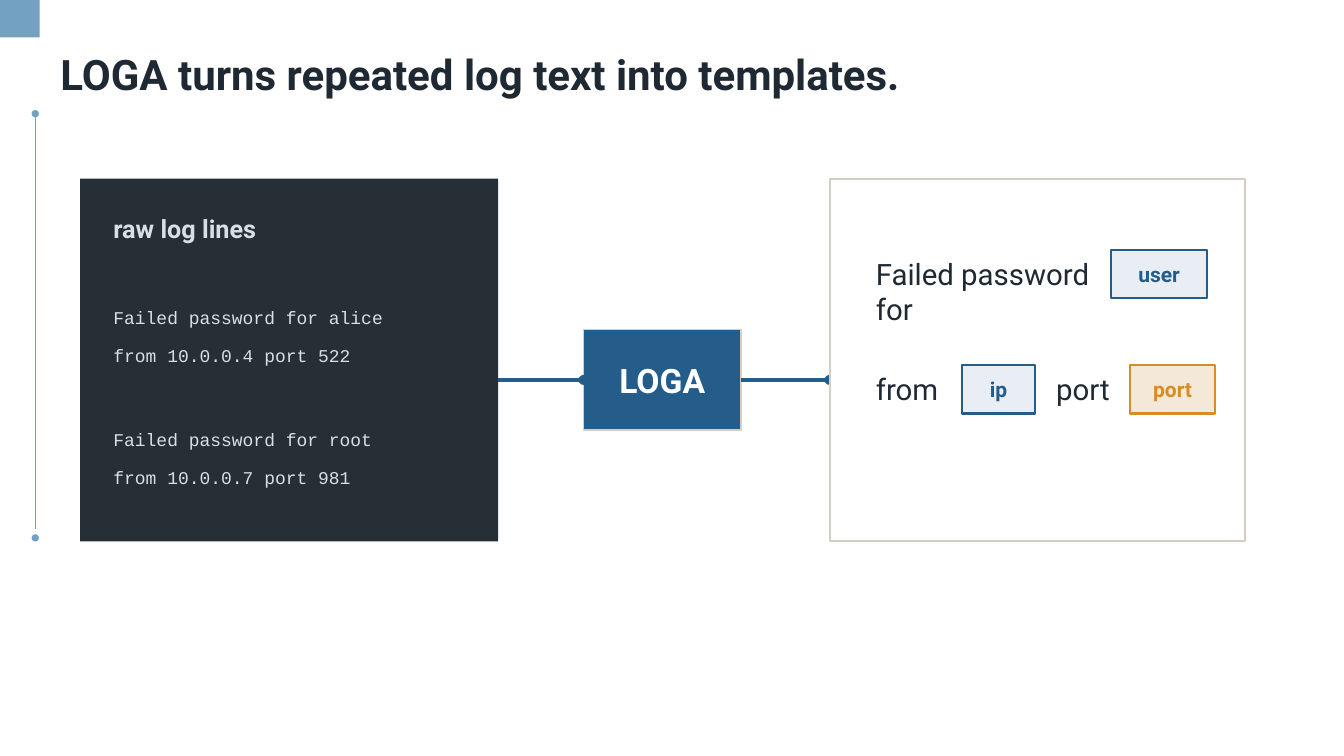
from lxml.etree import SubElement
from pptx import Presentation
from pptx.dml.color import RGBColor
from pptx.enum.shapes import MSO_CONNECTOR, MSO_SHAPE
from pptx.enum.text import MSO_ANCHOR, PP_ALIGN
from pptx.oxml.ns import qn
from pptx.util import Pt

# Content
TITLE = "LOGA turns repeated log text into templates."
HEAD = "raw log lines"
LOGS = [
    ("Failed password for alice", "from 10.0.0.4 port 522"),
    ("Failed password for root", "from 10.0.0.7 port 981"),
]
TOOL = "LOGA"
INK, BLUE, SKY, PALE = "1F2933", "245C8A", "73A1C1", "D8E0E4"
DARK, SAND, WHITE, AMBER = "272F36", "D6CEC3", "FFFFFF", "D98C24"
ICE, CREAM = "E9EEF5", "F4E8D8"
# Template rows: top of the chips, words (text, left, width),
# chips (text, left, width, fill, colour)
ROWS = [
    (178.4, [("Failed password for", 625.6, 166.4)],
     [("user", 793.4, 69.1, ICE, BLUE)]),
    (260.8, [("from", 625.6, 48.2), ("port", 754.4, 46.8)],
     [("ip", 687, 52.6, ICE, BLUE), ("port", 807, 61.2, CREAM, AMBER)]),
]

deck = Presentation()
deck.slide_width, deck.slide_height = Pt(960), Pt(540)
slide = deck.slides.add_slide(deck.slide_layouts[5])
parts = slide.shapes


def tint(code):
    return RGBColor.from_string(code)


def write(shape, text, size, color, bold=False, face="Roboto",
          align=PP_ALIGN.LEFT, anchor=MSO_ANCHOR.TOP):
    frame = shape.text_frame
    frame.word_wrap = True
    frame.vertical_anchor = anchor
    frame.margin_left = frame.margin_right = 0
    frame.margin_top = frame.margin_bottom = 0
    para = frame.paragraphs[0]
    para.alignment = align
    run = para.add_run()
    run.text = text
    font = run.font
    font.name, font.size, font.bold = face, Pt(size), bold
    font.color.rgb = tint(color)


def label(x, y, w, h, *args, **opts):
    box = parts.add_textbox(Pt(x), Pt(y), Pt(w), Pt(h))
    write(box, *args, **opts)


def block(x, y, w, h, fill, line=None, width=1.5, kind=MSO_SHAPE.RECTANGLE):
    shape = parts.add_shape(kind, Pt(x), Pt(y), Pt(w), Pt(h))
    shape.shadow.inherit = False
    shape.fill.solid()
    shape.fill.fore_color.rgb = tint(fill)
    if line:
        shape.line.color.rgb = tint(line)
        shape.line.width = Pt(width)
    else:
        shape.line.fill.background()
    return shape


def dot(x, y, size, fill):
    block(x - size / 2, y - size / 2, size, size, fill, kind=MSO_SHAPE.OVAL)


def link(x1, y1, x2, y2, color, width):
    wire = parts.add_connector(MSO_CONNECTOR.STRAIGHT,
                               Pt(x1), Pt(y1), Pt(x2), Pt(y2))
    wire.line.color.rgb = tint(color)
    wire.line.width = Pt(width)
    SubElement(wire._element.spPr, qn("a:effectLst"))
    return wire


MID = {"align": PP_ALIGN.CENTER, "anchor": MSO_ANCHOR.MIDDLE}

# Title
title = parts.title
title.left, title.top, title.width, title.height = (
    Pt(43.2), Pt(34.6), Pt(840), Pt(49.7))
write(title, TITLE, 30, INK, True)

# Raw log panel
LEFT, TOP, WIDE, HIGH = 57.2, 127.6, 298.6, 259.2
block(LEFT, TOP, WIDE, HIGH, DARK)
inset = LEFT + 23.8
label(inset, 152.6, 126, 20.9, HEAD, 18, PALE, True)
for i, entry in enumerate(LOGS):
    for j, text in enumerate(entry):
        label(inset, 219 + 87 * i + 27.2 * j, 219, 16.6,
              text, 12.8, PALE, face="Courier New")

# Tool box with its two links
BOX, SIDE, AXIS, RIGHT = 416.9, 112.3, 271.4, 592.6
tool = block(BOX, AXIS - 36, SIDE, 72, BLUE, SAND, 1.13)
write(tool, TOOL, 24, WHITE, True, **MID)
link(LEFT + WIDE, AXIS, BOX, AXIS, BLUE, 3).end_connect(tool, 1)
link(BOX + SIDE, AXIS, RIGHT, AXIS, BLUE, 3).begin_connect(tool, 3)
for x in (BOX, RIGHT):
    dot(x, AXIS, 7.2, BLUE)

# Template panel
block(RIGHT, TOP, 296.6, HIGH, WHITE, SAND)
for top, words, chips in ROWS:
    for text, x, w in words:
        label(x, top + 4.6, w, 25.2, text, 21, INK)
    for text, x, w, fill, color in chips:
        chip = block(x, top, w, 34.6, fill, color)
        write(chip, text, 15, color, True, **MID)

# Corner square and side rail
block(0, 0, 28.4, 26.8, SKY)
RAIL = 25.2
link(RAIL, 83.5, RAIL, 378, SKY, 0.75)
for y in (81.2, 384.2):
    dot(RAIL, y, 5.2, SKY)

deck.save("out.pptx")
